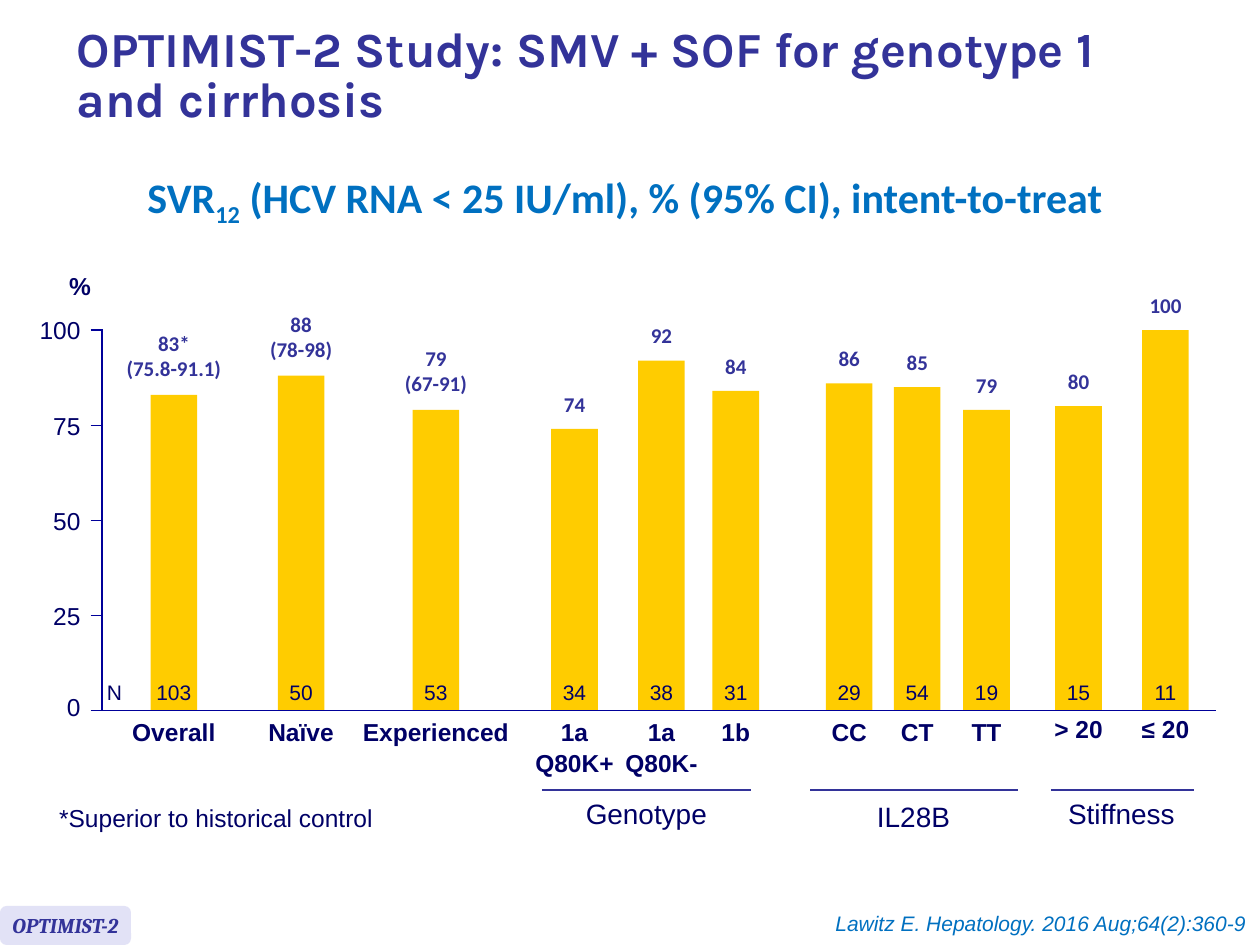
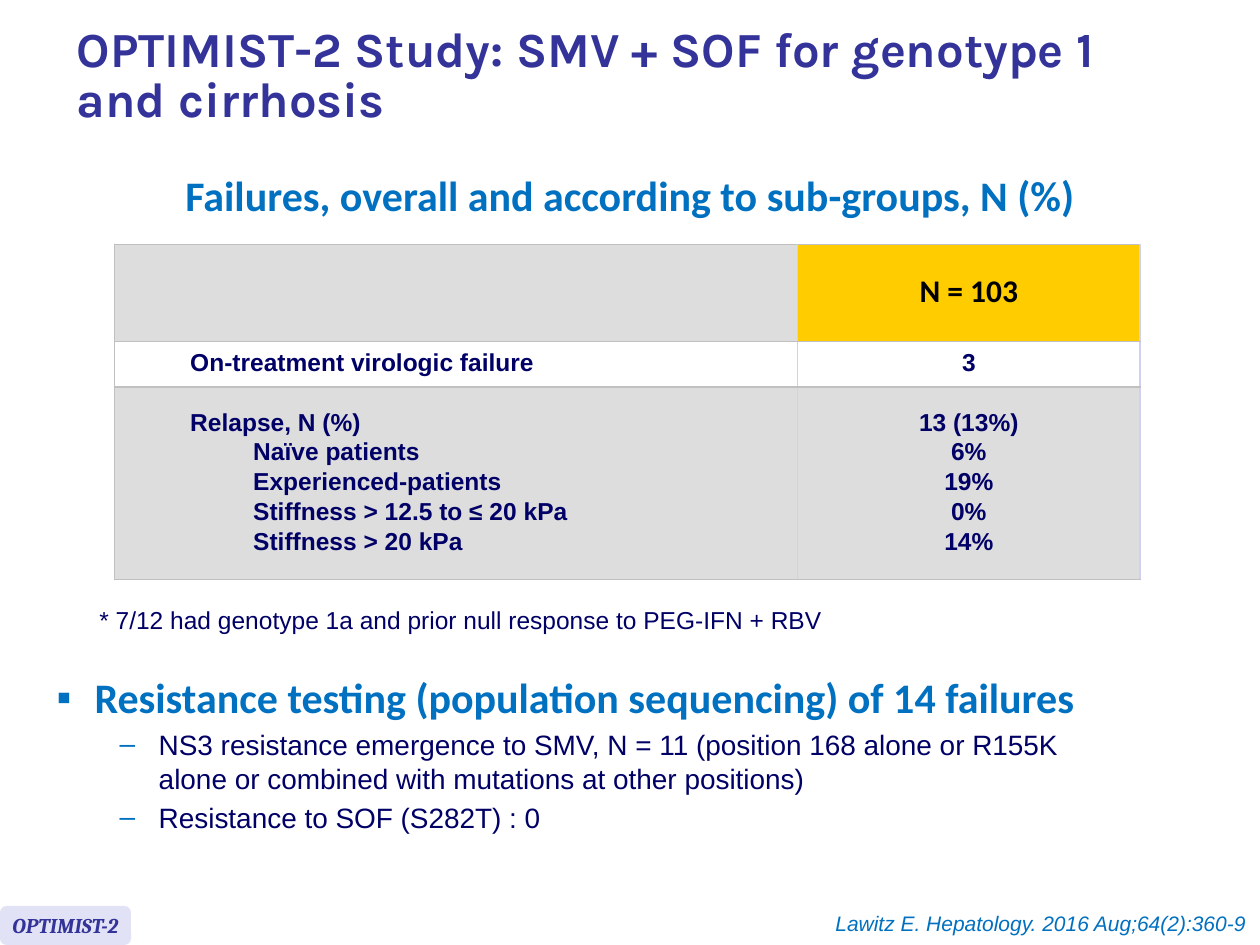
"""Builds two OPTIMIST-2 study slides: SVR12 bars by sub-group, and treatment failures."""
import lxml.etree
import pptx
import pptx.dml.color
import pptx.enum.shapes
import pptx.enum.text
import pptx.oxml.ns
import pptx.util

Inches, Pt = pptx.util.Inches, pptx.util.Pt
RGBColor = pptx.dml.color.RGBColor
Align, Anchor = pptx.enum.text.PP_ALIGN, pptx.enum.text.MSO_ANCHOR
AutoSize = pptx.enum.text.MSO_AUTO_SIZE
Shape = pptx.enum.shapes.MSO_SHAPE
qn = pptx.oxml.ns.qn

INDIGO = RGBColor(0x33, 0x33, 0x99)
BLUE = RGBColor(0x00, 0x70, 0xC0)
NAVY = RGBColor(0x00, 0x00, 0x66)
AXIS_BLUE = RGBColor(0x00, 0x00, 0x99)
YELLOW = RGBColor(0xFF, 0xCC, 0x00)
LAVENDER = RGBColor(0xE2, 0xE2, 0xF6)
PALE_RULE = RGBColor(0xD0, 0xD0, 0xF0)
GREY_RULE = RGBColor(0xC0, 0xC0, 0xC0)
GREY = RGBColor(0xDD, 0xDD, 0xDD)
WHITE = RGBColor(0xFF, 0xFF, 0xFF)
BLACK = RGBColor(0x00, 0x00, 0x00)


def style(paragraph, size, color, face="Arial", bold=False, italic=False, align=Align.LEFT):
    paragraph.alignment = align
    font = paragraph.font
    font.size, font.name, font.bold, font.italic = Pt(size), face, bold, italic
    font.color.rgb = color


def add_text(slide, box, text, size, color, margins=(0.1, 0.05), anchor=Anchor.TOP, **looks):
    frame = slide.shapes.add_textbox(*map(Inches, box)).text_frame
    frame.word_wrap = False
    frame.auto_size = AutoSize.SHAPE_TO_FIT_TEXT
    frame.vertical_anchor = anchor
    frame.margin_left = frame.margin_right = Inches(margins[0])
    frame.margin_top = frame.margin_bottom = Inches(margins[1])
    frame.text = text
    for paragraph in frame.paragraphs:
        style(paragraph, size, color, **looks)
    return frame


prs = pptx.Presentation()
prs.slide_width, prs.slide_height = Inches(10), Inches(7.5)
response = prs.slides.add_slide(prs.slide_layouts[5])
failures = prs.slides.add_slide(prs.slide_layouts[1])

for slide in (response, failures):
    title = slide.shapes.title
    title.left, title.top, title.width, title.height = map(Inches, (0.51, 0.08, 9.13, 1.07))
    title.text_frame.text = "OPTIMIST-2 Study: SMV + SOF for genotype 1\vand cirrhosis"
    title.text_frame.auto_size = AutoSize.NONE
    title.text_frame.vertical_anchor = Anchor.MIDDLE
    heading = title.text_frame.paragraphs[0]
    heading.line_spacing = 0.85
    style(heading, 28, INDIGO, face="Karla", bold=True)

    badge = slide.shapes.add_shape(Shape.ROUNDED_RECTANGLE, *map(Inches, (0, 7.19, 1.04, 0.31)))
    badge.shadow.inherit = False
    badge.fill.solid()
    badge.fill.fore_color.rgb = LAVENDER
    badge.line.fill.background()
    badge.text_frame.word_wrap = False
    badge.text_frame.vertical_anchor = Anchor.MIDDLE
    badge.text_frame.text = "OPTIMIST-2"
    style(badge.text_frame.paragraphs[0], 12, INDIGO, face="Cambria", bold=True, italic=True,
          align=Align.CENTER)

    add_text(slide, (6.51, 7.18, 3.48, 0.3), "Lawitz E. Hepatology. 2016 Aug;64(2):360-9", 12, BLUE,
             italic=True, align=Align.RIGHT)

subtitle = add_text(response, (1, 1.31, 7.92, 0.5), "SVR", 24, BLUE, face="Calibri", bold=True,
                    align=Align.CENTER).paragraphs[0]
subscript = subtitle.add_run()
subscript.text = "12"
subscript._r.get_or_add_rPr().set("baseline", "-25000")
subtitle.add_run().text = " (HCV RNA < 25 IU/ml), % (95% CI), intent-to-treat"

BASELINE, FULL_HEIGHT, BAR_WIDTH, COUNT_WIDTH = 5.64, 3.02, 0.37, 0.5
bars = [
    (1.38, 83, "83*\n(75.8-91.1)", "103", "Overall", 0.9),
    (2.39, 88, "88\n(78-98)", "50", "Naïve", 0.76),
    (3.46, 79, "79\n(67-91)", "53", "Experienced", 1.4),
    (4.56, 74, "74", "34", "1a\nQ80K+", 0.86),
    (5.25, 92, "92", "38", "1a\nQ80K-", 0.82),
    (5.84, 84, "84", "31", "1b", 0.5),
    (6.74, 86, "86", "29", "CC", 0.54),
    (7.28, 85, "85", "54", "CT", 0.54),
    (7.83, 79, "79", "19", "TT", 0.5),
    (8.56, 80, "80", "15", "> 20", 0.64),
    (9.25, 100, "100", "11", "≤ 20", 0.64),
]
for center, svr, svr_label, patients, category, category_width in bars:
    height = FULL_HEIGHT * svr / 100
    bar = response.shapes.add_shape(Shape.RECTANGLE, Inches(center - BAR_WIDTH / 2),
                                    Inches(BASELINE - height), Inches(BAR_WIDTH), Inches(height))
    bar.shadow.inherit = False
    bar.fill.solid()
    bar.fill.fore_color.rgb = YELLOW
    bar.line.fill.background()
    label_width, label_height = (0.98, 0.61) if "\n" in svr_label else (0.48, 0.4)
    add_text(response, (center - label_width / 2, BASELINE - height - label_height, label_width,
                        label_height),
             svr_label, 12, INDIGO, margins=(0.1, 0.1), face="Calibri", bold=True,
             align=Align.CENTER)
    add_text(response, (center - COUNT_WIDTH / 2, 5.34, COUNT_WIDTH, 0.3), patients, 12, NAVY,
             anchor=Anchor.BOTTOM, align=Align.CENTER)
    category_top = BASELINE - 0.02 if "20" in category else BASELINE
    category_frame = add_text(response, (center - category_width / 2, category_top, category_width,
                                         0.58 if "\n" in category else 0.34),
                              category, 14, NAVY, bold=True, align=Align.CENTER)
    for paragraph in category_frame.paragraphs[1:]:
        paragraph.space_before = Pt(0.7)

rules = [(0.72, BASELINE, 9.65, BASELINE, AXIS_BLUE, 0.75),
         (0.81, BASELINE - FULL_HEIGHT, 0.81, BASELINE, AXIS_BLUE, 0.75)]
for percent in range(0, 101, 25):
    tick_y = BASELINE - FULL_HEIGHT * percent / 100
    if percent:
        rules.append((0.72, tick_y, 0.82, tick_y, AXIS_BLUE, 0.75))
    label_top = tick_y - (0.12 if percent else 0.15)
    add_text(response, (0.31, label_top, 0.33, 0.24), str(percent), 14, NAVY, margins=(0, 0),
             anchor=Anchor.MIDDLE, align=Align.RIGHT)

for group, start, end, group_center, group_top in (("Genotype", 4.3, 5.96, 5.13, 6.27),
                                                   ("IL28B", 6.43, 8.08, 7.25, 6.3),
                                                   ("Stiffness", 8.34, 9.48, 8.9, 6.27)):
    rules.append((start, 6.27, end, 6.27, INDIGO, 1.5))
    add_text(response, (group_center - 0.6, group_top, 1.2, 0.37), group, 16, NAVY,
             align=Align.CENTER)

for x1, y1, x2, y2, color, weight in rules:
    rule = response.shapes.add_connector(pptx.enum.shapes.MSO_CONNECTOR.STRAIGHT,
                                         *map(Inches, (x1, y1, x2, y2)))
    rule.line.color.rgb = color
    rule.line.width = Pt(weight)
    lxml.etree.SubElement(rule._element.spPr, qn("a:effectLst"))

add_text(response, (0.45, 2.1, 0.38, 0.34), "%", 14, NAVY, bold=True)
add_text(response, (0.75, 5.34, 0.32, 0.3), "N", 12, NAVY, anchor=Anchor.BOTTOM)
footnote = add_text(response, (0.37, 6.35, 2.71, 0.32), "*Superior to historical control", 14, NAVY)
footnote.paragraphs[0].line_spacing = 0.9

add_text(failures, (0.78, 1.3, 8.44, 0.5), "Failures, overall and according to sub-groups, N (%)",
         24, BLUE, face="Calibri", bold=True, align=Align.CENTER)
add_text(failures, (0.69, 4.75, 5.96, 0.34),
         "* 7/12 had genotype 1a and prior null response to PEG-IFN + RBV", 14, NAVY)

failure_rows = [
    (0.77, GREY, "", "N = 103"),
    (0.36, WHITE, "On-treatment virologic failure", "3"),
    (1.53, GREY,
     "Relapse, N (%)\nNaïve patients\nExperienced-patients\n"
     "Stiffness > 12.5 to ≤ 20 kPa\nStiffness > 20 kPa",
     "13 (13%)\n6%\n19%\n0%\n14%"),
]
failure_table = failures.shapes.add_table(3, 2, *map(Inches, (0.91, 1.94, 8.14, 2.66))).table
failure_table.first_row = failure_table.horz_banding = False
failure_table.columns[0].width, failure_table.columns[1].width = Inches(5.42), Inches(2.72)
for row, (row_height, row_fill, *texts) in enumerate(failure_rows):
    failure_table.rows[row].height = Inches(row_height)
    for column, text in enumerate(texts):
        cell = failure_table.cell(row, column)
        header = row == 0 and column == 1
        left_rule = PALE_RULE if column else GREY_RULE
        for side, color in (("L", left_rule), ("R", PALE_RULE), ("T", GREY_RULE), ("B", GREY_RULE)):
            border = lxml.etree.SubElement(cell._tc.get_or_add_tcPr(), qn("a:ln" + side),
                                           w=str(Pt(1)))
            border_fill = lxml.etree.SubElement(border, qn("a:solidFill"))
            lxml.etree.SubElement(border_fill, qn("a:srgbClr"), val=str(color))
        cell.fill.solid()
        cell.fill.fore_color.rgb = YELLOW if header else row_fill
        cell.vertical_anchor = Anchor.MIDDLE
        cell.text_frame.text = text
        for line, paragraph in enumerate(cell.text_frame.paragraphs):
            paragraph.line_spacing = 0.8 if header else 0.9
            if line:
                paragraph.space_before = Pt(2.8)
            if column == 0:
                paragraph.level = 2 if line else 1
                paragraph._p.get_or_add_pPr().set("marL", str(Inches(0.5 * paragraph.level)))
            style(paragraph, 18 if header else 14, BLACK if header else NAVY,
                  face="Calibri" if header else "Arial", bold=True,
                  align=Align.CENTER if column else Align.LEFT)

resistance = failures.placeholders[1]
resistance.left, resistance.top, resistance.width, resistance.height = map(
    Inches, (0.35, 5.28, 8.74, 1.57))
resistance.text_frame.auto_size = AutoSize.NONE
resistance.text_frame.text = (
    "Resistance testing (population sequencing) of 14 failures\n"
    "NS3 resistance emergence to SMV, N = 11 (position 168 alone or R155K alone or combined "
    "with mutations at other positions)\n"
    "Resistance to SOF (S282T) : 0")
for line, paragraph in enumerate(resistance.text_frame.paragraphs):
    paragraph.level = 1 if line else 0
    properties = paragraph._p.get_or_add_pPr()
    properties.set("marL", str(Inches(0.81 if line else 0.3)))
    properties.set("indent", str(Inches(-0.31 if line else -0.3)))
    bullet_color = lxml.etree.SubElement(properties, qn("a:buClr"))
    lxml.etree.SubElement(bullet_color, qn("a:srgbClr"), val=str(BLUE))
    lxml.etree.SubElement(properties, qn("a:buFont"), typeface="Arial")
    lxml.etree.SubElement(properties, qn("a:buChar"), char="–" if line else "▪")
    paragraph.space_before = Pt(3.2 if line else 0)
    if line:
        style(paragraph, 16, NAVY)
    else:
        style(paragraph, 24, BLUE, face="Calibri", bold=True)

prs.save("out.pptx")
